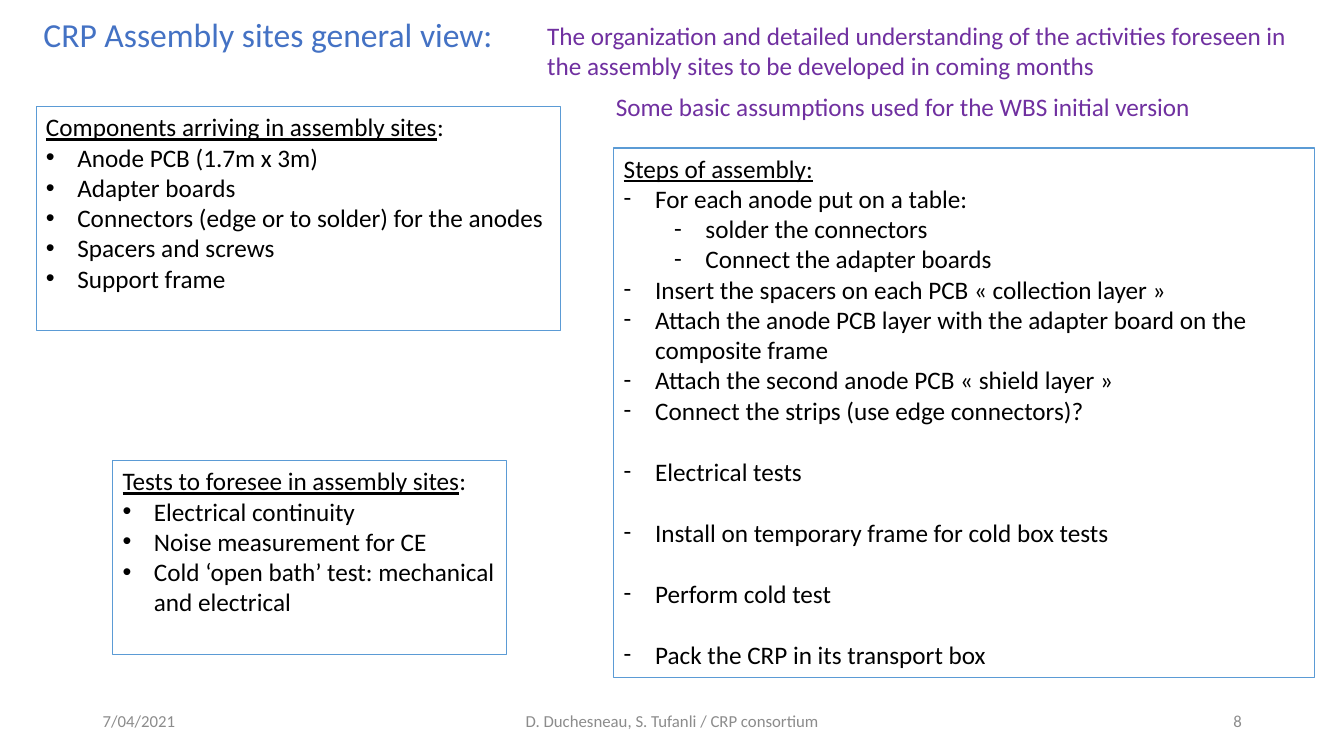
from dataclasses import dataclass

from lxml import etree
from pptx import Presentation
from pptx import util as u
from pptx.dml.color import RGBColor
from pptx.enum import shapes, text
from pptx.oxml import ns


@dataclass(frozen=True)
class Theme:
    font: str = "Calibri"
    title: str = "4472C4"
    note: str = "7030A0"
    body: str = "000000"
    foot: str = "8C8C8C"
    edge: str = "5B9BD5"
    big: int = 24
    mid: int = 18
    small: int = 12
    gap: int = 22  # one line of body text


THEME = Theme()
ALIGN = text.PP_ALIGN

PARTS = [
    "Anode PCB (1.7m x 3m)",
    "Adapter boards",
    "Connectors (edge or to solder) for the anodes",
    "Spacers and screws",
    "Support frame",
]
TESTS = [
    "Electrical continuity",
    "Noise measurement for CE",
    "Cold ‘open bath’ test: mechanical and electrical",
]
STEPS = [
    "For each anode put on a table:",
    "solder the connectors",
    "Connect the adapter boards",
    "Insert the spacers on each PCB « collection layer »",
    "Attach the anode PCB layer with the adapter board on the composite frame",
    "Attach the second anode PCB « shield layer »",
    "Connect the strips (use edge connectors)?",
    "Electrical tests",
    "Install on temporary frame for cold box tests",
    "Perform cold test",
    "Pack the CRP in its transport box",
]
SUBS = STEPS[1:3]
STAGES = STEPS[7:]


def cm(box):
    return [u.Cm(side) for side in box]


def style(para, size, color, align=ALIGN.LEFT):
    para.alignment = align
    for run in para.runs:
        run.font.name = THEME.font
        run.font.size = u.Pt(size)
        run.font.color.rgb = RGBColor.from_string(color)


def bullet(para, mark, level):
    """Give the paragraph a hanging bullet."""
    para.level = level
    props = para._p.get_or_add_pPr()
    props.set("marL", str(u.Cm(0.79 + 1.27 * level)))
    props.set("indent", str(u.Cm(-0.79)))
    face = etree.SubElement(props, ns.qn("a:buFont"))
    face.set("typeface", "Arial" if mark == "•" else THEME.font)
    etree.SubElement(props, ns.qn("a:buChar")).set("char", mark)


def add_title(slide, box, words):
    title = slide.shapes.title
    title.left, title.top, title.width, title.height = cm(box)
    frame = title.text_frame
    frame.text = words
    frame.word_wrap = False
    frame.auto_size = text.MSO_AUTO_SIZE.NONE
    frame.vertical_anchor = text.MSO_ANCHOR.TOP
    style(frame.paragraphs[0], THEME.big, THEME.title)


def add_label(slide, box, words, size, color, align=ALIGN.LEFT,
              anchor=text.MSO_ANCHOR.TOP):
    frame = slide.shapes.add_textbox(*cm(box)).text_frame
    frame.text = words
    frame.word_wrap = True
    frame.vertical_anchor = anchor
    style(frame.paragraphs[0], size, color, align)


def add_panel(slide, box, head, tail, items, mark):
    """Draw a framed list; only the head is underlined, not the tail."""
    panel = slide.shapes.add_shape(shapes.MSO_SHAPE.RECTANGLE, *cm(box))
    panel.shadow.inherit = False
    panel.fill.background()
    panel.line.color.rgb = RGBColor.from_string(THEME.edge)
    panel.line.width = u.Pt(0.75)
    frame = panel.text_frame
    frame.word_wrap = True
    frame.vertical_anchor = text.MSO_ANCHOR.TOP
    first = frame.paragraphs[0]
    first.text = head
    first.runs[0].font.underline = True
    if tail:
        first.add_run().text = tail
    style(first, THEME.mid, THEME.body)
    for item in items:
        para = frame.add_paragraph()
        para.text = item
        style(para, THEME.mid, THEME.body)
        if item in STAGES:
            para.space_before = u.Pt(THEME.gap)
        bullet(para, mark, int(item in SUBS))


def add_foot(slide):
    cells = [
        (2.34, 7.62, "7/04/2021", ALIGN.LEFT),
        (11.23, 11.43, "D. Duchesneau, S. Tufanli / CRP consortium", ALIGN.CENTER),
        (23.93, 7.62, "8", ALIGN.RIGHT),
    ]
    for left, width, words, align in cells:
        add_label(slide, (left, 17.65, width, 1.02), words, THEME.small,
                  THEME.foot, align, text.MSO_ANCHOR.MIDDLE)


def main():
    deck = Presentation()
    deck.slide_width, deck.slide_height = u.Cm(33.87), u.Cm(19.05)
    slide = deck.slides.add_slide(deck.slide_layouts.get_by_name("Title Only"))
    add_title(slide, (0.84, 0.23, 11.94, 1.27), "CRP Assembly sites general view:")
    add_label(slide, (13.54, 0.38, 19.58, 1.8),
              "The organization and detailed understanding of the activities "
              "foreseen in the assembly sites to be developed in coming months",
              THEME.mid, THEME.note)
    add_label(slide, (15.27, 2.18, 15.16, 1.02),
              "Some basic assumptions used for the WBS initial version",
              THEME.mid, THEME.note)
    add_panel(slide, (0.91, 2.69, 13.21, 5.64),
              "Components arriving in assembly sites", ":", PARTS, "•")
    add_panel(slide, (2.84, 11.61, 9.93, 4.88),
              "Tests to foresee in assembly sites", ":", TESTS, "•")
    add_panel(slide, (15.47, 3.73, 17.65, 13.34),
              "Steps of assembly:", "", STEPS, "-")
    add_foot(slide)
    deck.save("out.pptx")


if __name__ == "__main__":
    main()
